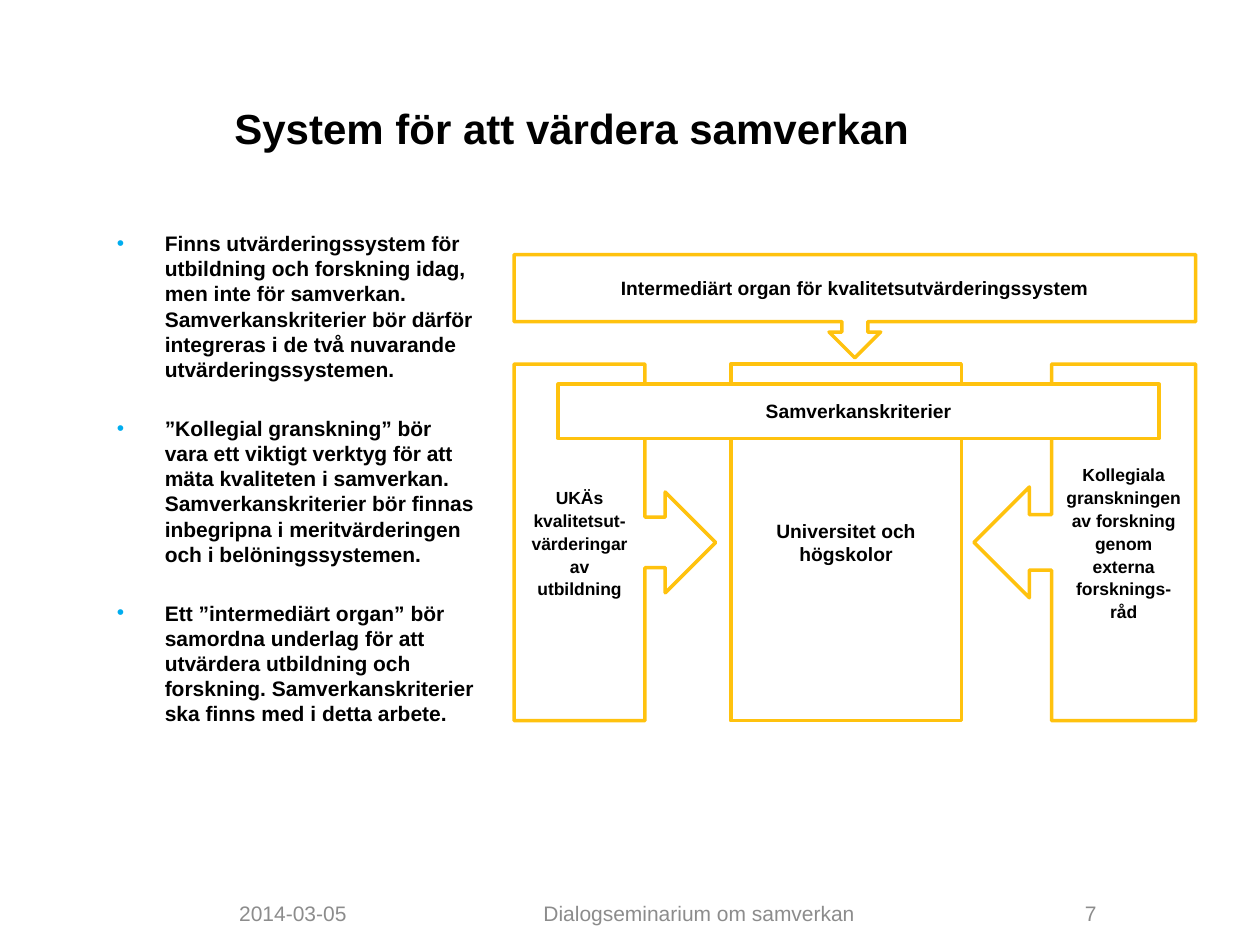
from dataclasses import dataclass

from lxml import etree
from pptx import Presentation
from pptx.dml.color import RGBColor
from pptx.enum.shapes import MSO_SHAPE
from pptx.enum.text import MSO_ANCHOR, PP_ALIGN
from pptx.oxml.ns import qn
from pptx.util import Inches, Pt

BLACK = RGBColor(0x00, 0x00, 0x00)
WHITE = RGBColor(0xFF, 0xFF, 0xFF)
GREY = RGBColor(0x8C, 0x8C, 0x8C)
YELLOW = RGBColor(0xFF, 0xC2, 0x0E)
BULLET_BLUE = RGBColor(0x00, 0xAD, 0xEF)
FONT = "Arial"
LEFT, CENTER, RIGHT = PP_ALIGN.LEFT, PP_ALIGN.CENTER, PP_ALIGN.RIGHT
MIDDLE = MSO_ANCHOR.MIDDLE
RECTANGLE = MSO_SHAPE.RECTANGLE
ARROW_DOWN = MSO_SHAPE.DOWN_ARROW_CALLOUT
ARROW_LEFT = MSO_SHAPE.LEFT_ARROW_CALLOUT
ARROW_RIGHT = MSO_SHAPE.RIGHT_ARROW_CALLOUT

COLUMNS, ROWS = 100, 75
SLIDE_WIDTH, SLIDE_HEIGHT = Inches(10), Inches(7.5)
TITLE_ONLY = 5

ARGUMENTS = [
    "Finns utvärderingssystem för utbildning och forskning idag, men inte för samverkan. "
    "Samverkanskriterier bör därför integreras i de två nuvarande utvärderingssystemen.",
    "”Kollegial granskning” bör vara ett viktigt verktyg för att mäta kvaliteten i samverkan. "
    "Samverkanskriterier bör finnas inbegripna i meritvärderingen och i belöningssystemen.",
    "Ett ”intermediärt organ” bör samordna underlag för att utvärdera utbildning och forskning. "
    "Samverkanskriterier ska finns med i detta arbete.",
]


@dataclass
class Box:
    column: float
    row: float
    columns: float
    rows: float

    def inner(self, column, row, columns, rows):
        return Box(self.column + column, self.row + row, columns, rows)

    def frame(self):
        return (
            round(self.column * SLIDE_WIDTH / COLUMNS),
            round(self.row * SLIDE_HEIGHT / ROWS),
            round(self.columns * SLIDE_WIDTH / COLUMNS),
            round(self.rows * SLIDE_HEIGHT / ROWS),
        )


def style(para, size, color=BLACK, bold=True, align=LEFT):
    para.alignment = align
    para.font.name = FONT
    para.font.size = Pt(size)
    para.font.bold = bold
    para.font.color.rgb = color


def add_bullet(para):
    properties = para._p.get_or_add_pPr()
    properties.set("marL", str(Inches(0.38)))
    properties.set("indent", str(-Inches(0.38)))
    color = etree.SubElement(properties, qn("a:buClr"))
    etree.SubElement(color, qn("a:srgbClr"), val=str(BULLET_BLUE))
    etree.SubElement(properties, qn("a:buFont"), typeface=FONT)
    etree.SubElement(properties, qn("a:buChar"), char="•")


def place_title(page, box):
    title = page.shapes.title
    title.left, title.top, title.width, title.height = box.frame()
    title.text_frame.text = "System för att värdera samverkan"
    title.text_frame.vertical_anchor = MIDDLE
    style(title.text_frame.paragraphs[0], 24)


def place_arguments(page, box):
    text = page.shapes.add_textbox(*box.frame()).text_frame
    text.word_wrap = True
    for index, argument in enumerate(ARGUMENTS):
        para = text.add_paragraph() if index else text.paragraphs[0]
        para.text = argument
        add_bullet(para)
        para.line_spacing = Pt(14.4)
        para.space_before = Pt(19.2 if index else 0)
        style(para, 12)


def place_block(page, box, kind, words, size):
    block = page.shapes.add_shape(kind, *box.frame())
    block.shadow.inherit = False
    block.fill.solid()
    block.fill.fore_color.rgb = WHITE
    block.line.color.rgb = YELLOW
    block.line.width = Pt(2)
    text = block.text_frame
    text.word_wrap = True
    text.vertical_anchor = MIDDLE
    para = text.paragraphs[0]
    para.text = words
    para.line_spacing = Pt(13)
    para.space_after = Pt(6)
    style(para, size, align=CENTER)


def place_diagram(page, box):
    pillar_rows = 28.3
    pillar_top = box.rows - pillar_rows
    pillars = [
        (36.5, 17.6, ARROW_LEFT,
         "Kollegiala granskningen av forskning genom externa forsknings-råd", 10),
        (17.2, 18.3, RECTANGLE, "Universitet och högskolor", 11),
        (0, 16, ARROW_RIGHT, "UKÄs kvalitetsut-värderingar av utbildning", 10),
    ]
    for column, columns, kind, words, size in pillars:
        place_block(page, box.inner(column, pillar_top, columns, pillar_rows), kind, words, size)
    place_block(page, box.inner(0, 0, box.columns, 8.2), ARROW_DOWN,
                "Intermediärt organ för kvalitetsutvärderingssystem", 11)
    place_block(page, box.inner(3.5, 10.3, 47.7, 4.3), RECTANGLE, "Samverkanskriterier", 11)


def place_footer(page, box):
    parts = [
        (0, 11.5, "2014-03-05", LEFT),
        (12.3, 50.4, "Dialogseminarium om samverkan", CENTER),
        (63.5, 6.5, "7", RIGHT),
    ]
    for column, columns, words, align in parts:
        part = box.inner(column, 0, columns, box.rows)
        text = page.shapes.add_textbox(*part.frame()).text_frame
        text.word_wrap = True
        text.vertical_anchor = MIDDLE
        text.text = words
        style(text.paragraphs[0], 12, GREY, False, align)


def main():
    deck = Presentation()
    deck.slide_width, deck.slide_height = SLIDE_WIDTH, SLIDE_HEIGHT
    page = deck.slides.add_slide(deck.slide_layouts[TITLE_ONLY])
    place_arguments(page, Box(8.3, 17.8, 30.7, 49.5))
    place_title(page, Box(17.6, 3.9, 69.9, 12.5))
    place_footer(page, Box(18, 70.5, 70, 4))
    place_diagram(page, Box(40.8, 20.2, 54.1, 37))
    deck.save("out.pptx")


if __name__ == "__main__":
    main()
